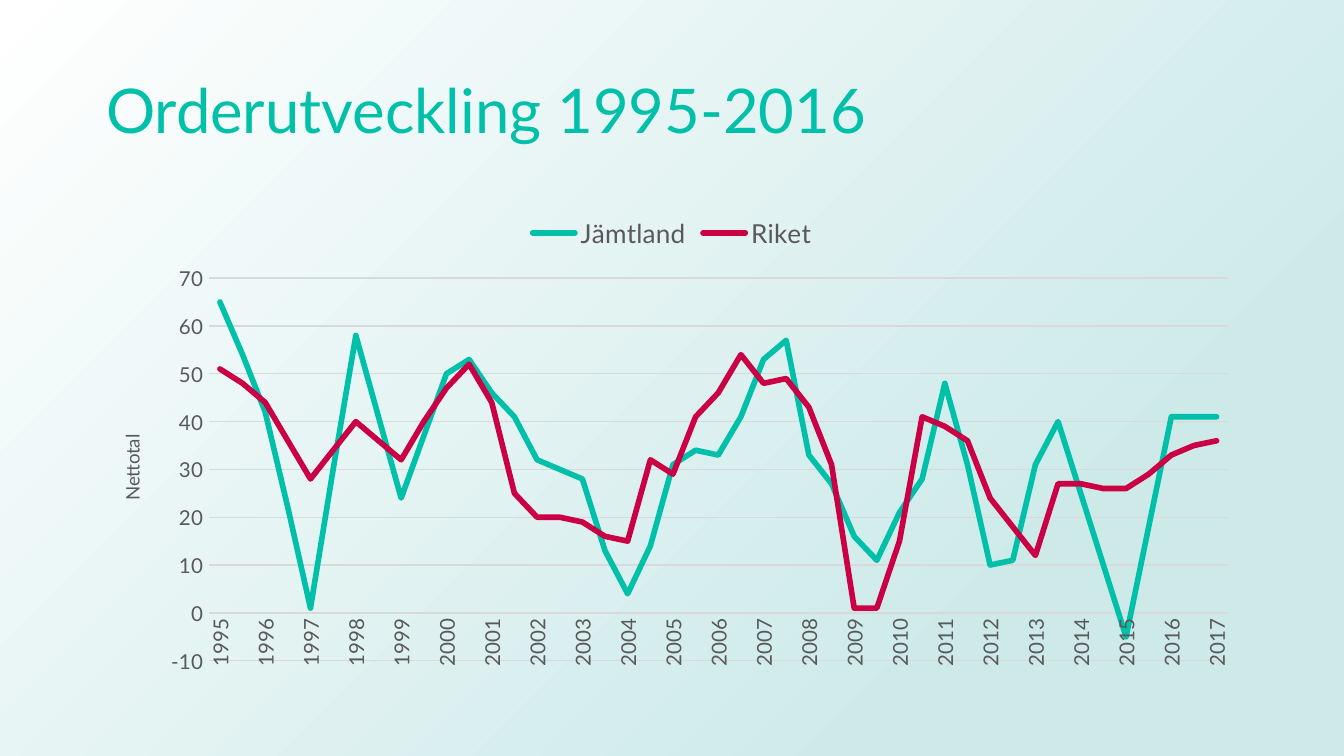
import pptx
import pptx.chart.data
import pptx.dml.color
import pptx.enum.chart
import pptx.enum.shapes
import pptx.enum.text
import pptx.oxml
import pptx.oxml.ns
import pptx.util
from lxml import etree

Inches = pptx.util.Inches
Pt = pptx.util.Pt
RGBColor = pptx.dml.color.RGBColor
qn = pptx.oxml.ns.qn

TEAL = RGBColor(0x00, 0xC0, 0xA9)
CRIMSON = RGBColor(0xCB, 0x00, 0x44)
GREY = RGBColor(0x59, 0x59, 0x59)
GRID = RGBColor(0xD9, 0xD9, 0xD9)
MINT = RGBColor(0xCD, 0xEA, 0xE9)
WHITE = RGBColor(0xFF, 0xFF, 0xFF)
FONT = "Lato"

HALF_YEARS = [str(1995 + half // 2) for half in range(45)]
ORDERS = {
    "Jämtland": (TEAL, [
        65, 54, 42, 22, 1, 30, 58, 41, 24, 37, 50, 53, 46, 41, 32,
        30, 28, 13, 4, 14, 31, 34, 33, 41, 53, 57, 33, 27, 16, 11,
        21, 28, 48, 31, 10, 11, 31, 40, 25, 10, -5, 18, 41, 41, 41]),
    "Riket": (CRIMSON, [
        51, 48, 44, 36, 28, 34, 40, 36, 32, 40, 47, 52, 44, 25, 20,
        20, 19, 16, 15, 32, 29, 41, 46, 54, 48, 49, 43, 31, 1, 1,
        15, 41, 39, 36, 24, 18, 12, 27, 27, 26, 26, 29, 33, 35, 36]),
}


def style_font(font, size, color):
    """Give a font the slide's typeface, a size and a colour."""
    font.name = FONT
    font.size = Pt(size)
    font.bold = False
    font.color.rgb = color


def add_backdrop(slide, left, top, width, height):
    """Place the gradient that widens from the lower right corner."""
    backdrop = slide.shapes.add_shape(
        pptx.enum.shapes.MSO_SHAPE.RECTANGLE, left, top, width, height)
    backdrop.shadow.inherit = False
    backdrop.line.fill.background()
    backdrop.fill.gradient()
    stops = backdrop.fill.gradient_stops
    for stop, position, color in zip(stops, (0.23, 1), (MINT, WHITE)):
        stop.position = position
        stop.color.rgb = color
    gradient = backdrop._element.spPr.find(qn("a:gradFill"))
    gradient.remove(gradient.find(qn("a:lin")))
    circle = etree.SubElement(gradient, qn("a:path"), path="circle")
    etree.SubElement(circle, qn("a:fillToRect"), l="100000", t="100000")
    slide.shapes._spTree.insert(2, backdrop._element)


def place_title(slide, left, top, width, height):
    """Fill and format the title placeholder."""
    title = slide.shapes.title
    title.left, title.top, title.width, title.height = left, top, width, height
    frame = title.text_frame
    frame.text = "Orderutveckling 1995-2016"
    frame.word_wrap = True
    frame.auto_size = pptx.enum.text.MSO_AUTO_SIZE.NONE
    frame.vertical_anchor = pptx.enum.text.MSO_ANCHOR.MIDDLE
    heading = frame.paragraphs[0]
    heading.alignment = pptx.enum.text.PP_ALIGN.LEFT
    heading.line_spacing = 0.9
    style_font(heading.runs[0].font, 33, TEAL)


def set_layout(parent, **fractions):
    """Fix the position of a chart part as fractions of the chart."""
    for old in parent.findall(qn("c:layout")):
        parent.remove(old)
    layout = etree.Element(qn("c:layout"))
    manual = etree.SubElement(layout, qn("c:manualLayout"))
    if "w" in fractions:
        etree.SubElement(manual, qn("c:layoutTarget"), val="inner")
    for mode in ("xMode", "yMode"):
        etree.SubElement(manual, qn("c:" + mode), val="edge")
    for name, value in fractions.items():
        etree.SubElement(manual, qn("c:" + name), val=str(value))
    text = parent.find(qn("c:tx"))
    parent.insert(0 if text is None else 1, layout)


def format_axes(chart):
    """Format the year axis, the value axis and the axis title."""
    years, values = chart.category_axis, chart.value_axis
    for axis in (years, values):
        axis.major_tick_mark = pptx.enum.chart.XL_TICK_MARK.NONE
        axis.minor_tick_mark = pptx.enum.chart.XL_TICK_MARK.NONE
        style_font(axis.tick_labels.font, 11, GREY)
    years.format.line.color.rgb = GRID
    years.format.line.width = Pt(0.75)
    year_text = years._element.find(qn("c:txPr")).find(qn("a:bodyPr"))
    year_text.set("rot", "-5400000")
    year_text.set("vert", "horz")
    skip = etree.Element(qn("c:tickLblSkip"), val="2")
    years._element.find(qn("c:noMultiLvlLbl")).addprevious(skip)

    values.minimum_scale, values.maximum_scale = -10, 70
    values.major_unit = 10
    values.tick_labels.number_format = "0"
    values.tick_labels.number_format_is_linked = False
    values.format.line.fill.background()
    values.major_gridlines.format.line.color.rgb = GRID
    values.major_gridlines.format.line.width = Pt(0.75)
    frame = values.axis_title.text_frame
    frame.text = "Nettotal"
    style_font(frame.paragraphs[0].runs[0].font, 10, GREY)
    frame._txBody.find(qn("a:bodyPr")).set("rot", "-5400000")
    set_layout(values.axis_title._element, x=0.02, y=0.48)


def add_order_chart(slide, left, top, width, height):
    """Add the line chart that compares the region with the country."""
    orders = pptx.chart.data.CategoryChartData(number_format="0")
    orders.categories = HALF_YEARS
    for name, (_, values) in ORDERS.items():
        orders.add_series(name, values)
    chart = slide.shapes.add_chart(
        pptx.enum.chart.XL_CHART_TYPE.LINE,
        left, top, width, height, orders).chart
    chart.has_title = False
    chart.font.name = FONT
    chart.font.size = Pt(10)
    chart.has_legend = True
    chart.legend.position = pptx.enum.chart.XL_LEGEND_POSITION.TOP
    chart.legend.include_in_layout = False
    style_font(chart.legend.font, 14, GREY)
    plot = chart.plots[0]
    plot.vary_by_categories = False
    for series in plot.series:
        series.smooth = False
        series.marker.style = pptx.enum.chart.XL_MARKER_STYLE.NONE
        series.format.line.color.rgb = ORDERS[series.name][0]
        series.format.line.width = Pt(3)
        outline = series._element.find(qn("c:spPr")).find(qn("a:ln"))
        outline.set("cap", "rnd")
        etree.SubElement(outline, qn("a:round"))
    format_axes(chart)
    plot_area = chart._chartSpace.chart.plotArea
    set_layout(plot_area, x=0.1, y=0.16, w=0.88, h=0.8)


def main():
    """Build the slide and save it."""
    deck = pptx.Presentation()
    deck.slide_width, deck.slide_height = Inches(10), Inches(10 * 9 / 16)
    slide = deck.slides.add_slide(deck.slide_layouts[5])
    left, width = Inches(0.69), Inches(8.62)
    add_backdrop(slide, 0, 0, deck.slide_width, deck.slide_height)
    place_title(slide, left, Inches(0.3), width, Inches(1.09))
    add_order_chart(slide, left, Inches(1.5), width, Inches(3.56))
    deck.save("out.pptx")


if __name__ == "__main__":
    main()
